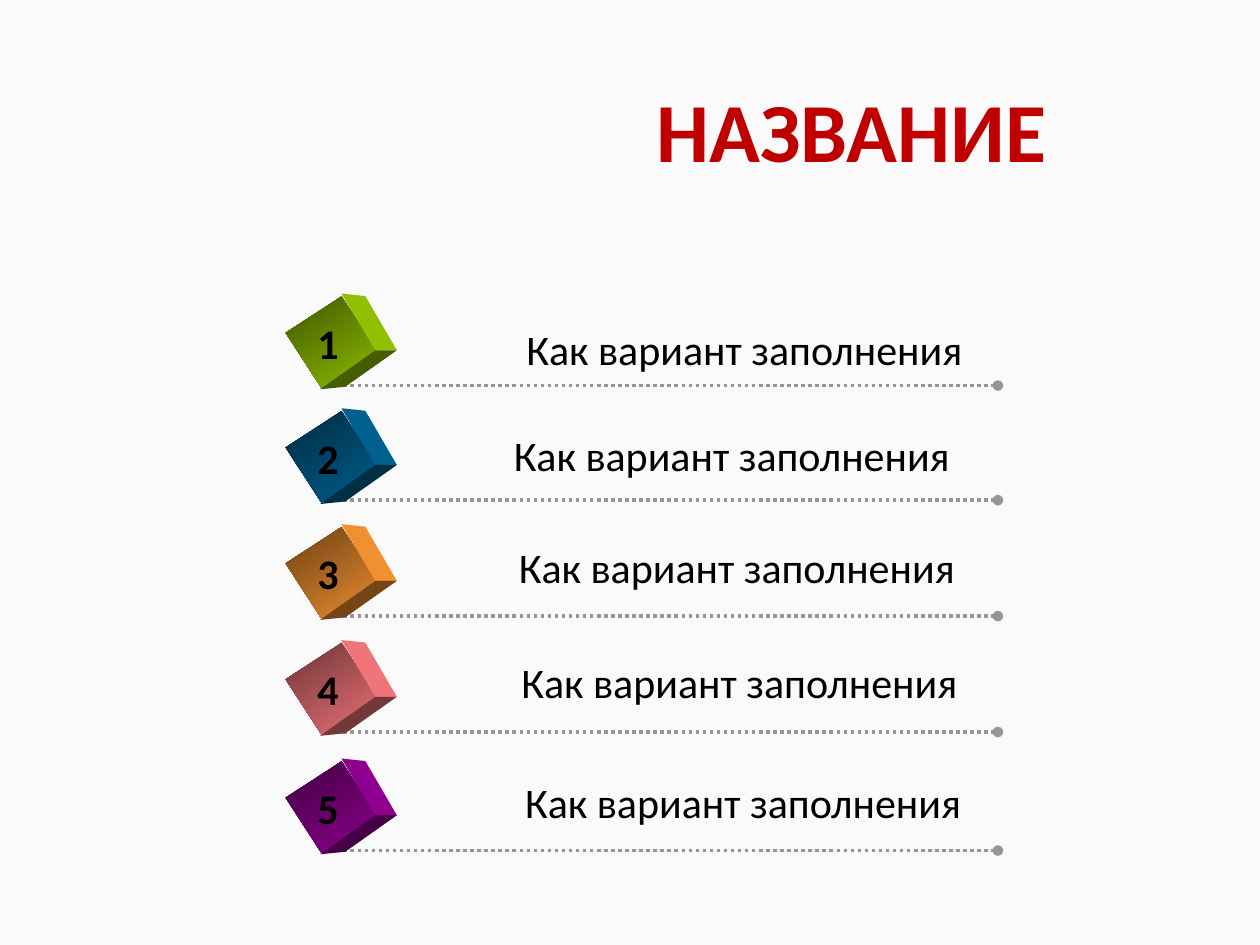
from lxml.etree import SubElement
from pptx import Presentation
from pptx.dml.color import RGBColor
from pptx.enum.dml import MSO_LINE
from pptx.enum.shapes import MSO_CONNECTOR, MSO_SHAPE
from pptx.enum.text import MSO_ANCHOR, MSO_AUTO_SIZE, PP_ALIGN
from pptx.oxml.ns import qn
from pptx.util import Inches, Pt

FONT = "Calibri"
LABEL = "Как вариант заполнения"
COLORS = {
    "background": "FAFAFA",
    "title": "C00000",
    "outline": "FFFFFF",
    "text": "000000",
    "line": "969696",
    "green": "99CC00",
    "blue": "006699",
    "orange": "FF9933",
    "pink": "FF7C80",
    "purple": "990099",
}
ROWS = [
    ("green", 3.06, 4.08, 2.52),
    ("blue", 3.97, 3.98, 3.36),
    ("orange", 4.89, 4.02, 4.25),
    ("pink", 5.81, 4.04, 5.16),
    ("purple", 6.75, 4.07, 6.11),
]
SIDE_FACE = [(2.71, -0.73), (2.9, -0.71), (3.15, -0.28), (2.98, -0.28)]
BOTTOM_FACE = [(2.98, -0.28), (3.15, -0.28), (2.74, 0.01), (2.54, 0.03)]


def color(name, brightness=1):
    rgb = RGBColor.from_string(COLORS[name])
    return RGBColor(*(round(channel * brightness) for channel in rgb))


def add_title(slide):
    sp = slide.shapes.title
    sp.left, sp.top, sp.width, sp.height = map(Inches, (4.08, 0.64, 5.36, 0.87))
    tf = sp.text_frame
    tf.vertical_anchor = MSO_ANCHOR.MIDDLE
    p = tf.paragraphs[0]
    p.alignment = PP_ALIGN.CENTER
    p.line_spacing = 0.9
    r = p.add_run()
    r.text = "НАЗВАНИЕ"
    ln = SubElement(r._r.get_or_add_rPr(), qn("a:ln"), w=str(Pt(0.75)))
    fill = SubElement(ln, qn("a:solidFill"))
    SubElement(fill, qn("a:srgbClr"), val=COLORS["outline"])
    r.font.name = FONT
    r.font.size = Pt(48)
    r.font.bold = True
    r.font.color.rgb = color("title")


def add_text(shapes, text, left, top, width, bold=False):
    sp = shapes.add_textbox(Inches(left), Inches(top), Inches(width), Inches(0.5))
    tf = sp.text_frame
    tf.word_wrap = False
    tf.auto_size = MSO_AUTO_SIZE.SHAPE_TO_FIT_TEXT
    p = tf.paragraphs[0]
    p.text = text
    p.font.name = FONT
    p.font.size = Pt(24)
    p.font.bold = bold
    p.font.color.rgb = color("text")


def add_dotted_line(shapes, y):
    line = shapes.add_connector(
        MSO_CONNECTOR.STRAIGHT, Inches(2.67), Inches(y), Inches(7.92), Inches(y)
    )
    line.line.color.rgb = color("line")
    line.line.width = Pt(2)
    line.line.dash_style = MSO_LINE.ROUND_DOT
    SubElement(line.get_or_add_ln(), qn("a:tailEnd"), type="oval")
    SubElement(line._element.spPr, qn("a:effectLst"))


def add_face(shapes, points, y, rgb):
    corners = [(Inches(x), Inches(y + dy)) for x, dy in points]
    builder = shapes.build_freeform(*corners[0])
    builder.add_line_segments(corners[1:], close=True)
    sp = builder.convert_to_shape()
    sp.shadow.inherit = False
    sp.fill.solid()
    sp.fill.fore_color.rgb = rgb
    sp.line.fill.background()


def add_cube(shapes, name, y):
    sp = shapes.add_shape(
        MSO_SHAPE.RECTANGLE, Inches(2.37), Inches(y - 0.61), Inches(0.52), Inches(0.53)
    )
    sp.rotation = 57
    sp.shadow.inherit = False
    sp.line.fill.background()
    sp.fill.gradient()
    sp.fill.gradient_angle = 0
    for stop, brightness in zip(sp.fill.gradient_stops, (0.42, 0.92)):
        stop.color.rgb = color(name, brightness)
    add_face(shapes, SIDE_FACE, y, color(name, 0.94))
    add_face(shapes, BOTTOM_FACE, y, color(name, 0.45))


def add_row(slide, number, name, y, label_left, label_top):
    shapes = slide.shapes.add_group_shape().shapes
    add_dotted_line(shapes, y)
    add_cube(shapes, name, y)
    add_text(shapes, str(number), 2.42, y - 0.59, 0.37, bold=True)
    add_text(shapes, LABEL, label_left, label_top, 3.7)


def main():
    prs = Presentation()
    prs.slide_width, prs.slide_height = Inches(10), Inches(7.5)
    slide = prs.slides.add_slide(prs.slide_layouts[5])
    slide.background.fill.solid()
    slide.background.fill.fore_color.rgb = color("background")
    add_title(slide)
    for number, row in enumerate(ROWS, 1):
        add_row(slide, number, *row)
    prs.save("out.pptx")


if __name__ == "__main__":
    main()
